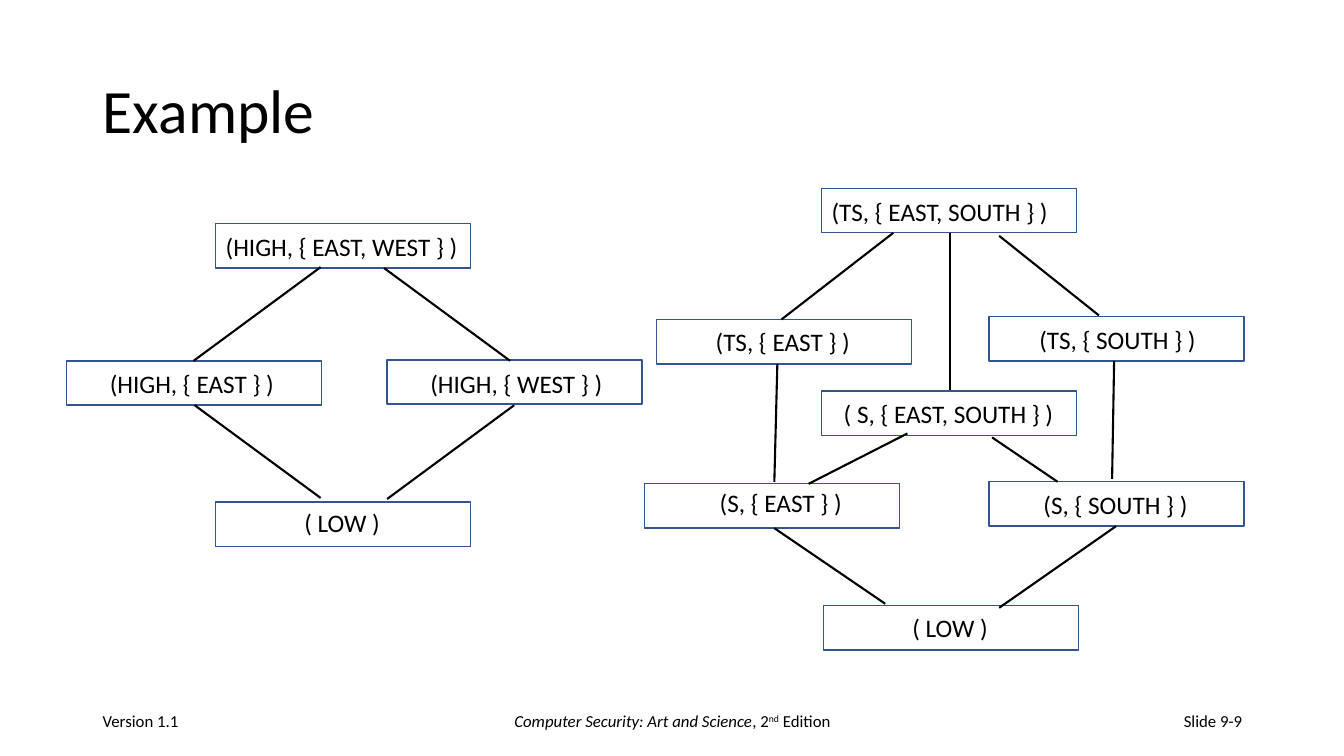
import pptx
import pptx.util
from lxml import etree
from pptx.dml.color import RGBColor
from pptx.enum.shapes import MSO_CONNECTOR, MSO_SHAPE
from pptx.enum.text import MSO_ANCHOR, MSO_AUTO_SIZE, PP_ALIGN
from pptx.oxml.ns import qn

NODE_W, NODE_H, LABEL_H = 253, 44, 40
BLACK, BLUE = "000000", "325491"

# Label, node left and top, then label offset in the node and label width
HIGH_NODES = [
    ("(HIGH, { EAST, WEST } )", 148, 0, 0, 3, NODE_W),
    ("(HIGH, { EAST } )", 0, 136, 33, 2, 185),
    ("(HIGH, { WEST } )", 318, 135, 33, 3, 193),
    ("( LOW )", 148, 276, 78, 0, 96),
]
HIGH_EDGES = [
    (252, 43, 126, 136), (315, 44, 440, 136),
    (127, 180, 252, 272), (444, 180, 318, 273),
]
TS_NODES = [
    ("(TS, { EAST, SOUTH } )", 176, 0, 0, 3, NODE_W),
    ("(TS, { EAST } )", 12, 130, 49, 2, 155),
    ("(TS, { SOUTH } )", 342, 127, 40, 3, 183),
    ("( S, { EAST, SOUTH } )", 176, 201, 12, 2, 230),
    ("(S, { EAST } )", 0, 293, 65, -1, 143),
    ("(S, { SOUTH } )", 342, 291, 44, 3, 165),
    ("( LOW )", 178, 414, 78, 2, 96),
]
TS_EDGES = [
    (247, 44, 136, 130), (303, 44, 303, 200), (352, 47, 451, 126),
    (132, 174, 129, 291), (466, 171, 464, 288),
    (261, 243, 163, 293), (345, 247, 410, 291),
    (129, 337, 239, 412), (468, 335, 352, 416),
]


def px(n):
    """100 px to the inch."""
    return pptx.util.Emu(n * 9144)


def color(value):
    return RGBColor.from_string(value)


def style(p, size):
    for r in p.runs:
        r.font.size = pptx.util.Pt(size)
        r.font.name = "Calibri"
        r.font.color.rgb = color(BLACK)


def add_title(s, x, y, w, h):
    title = s.shapes.title
    title.left, title.top, title.width, title.height = map(px, (x, y, w, h))
    tf = title.text_frame
    tf.text = "Example"
    tf.vertical_anchor = MSO_ANCHOR.MIDDLE
    p = tf.paragraphs[0]
    p.alignment = PP_ALIGN.LEFT
    p.line_spacing = 0.9
    style(p, 44)


def add_text(shapes, x, y, w, h, parts, size, align=PP_ALIGN.LEFT, wrap=True):
    tf = shapes.add_textbox(px(x), px(y), px(w), px(h)).text_frame
    tf.word_wrap = wrap
    p = tf.paragraphs[0]
    p.alignment = align
    for part in parts:
        p.add_run().text = part
    style(p, size)
    return tf


def add_footer(s, x, y, w, h):
    book = ["Computer Security: Art and Science", ", 2", "nd", " Edition"]
    fields = [
        (x, 300, ["Version 1.1"], PP_ALIGN.LEFT),
        (x + (w - 450) // 2, 450, book, PP_ALIGN.CENTER),
        (x + w - 300, 300, ["Slide 9-9"], PP_ALIGN.RIGHT),
    ]
    for left, width, parts, align in fields:
        tf = add_text(s.shapes, left, y, width, h, parts, 12, align)
        tf.vertical_anchor = MSO_ANCHOR.MIDDLE
        if parts is book:
            runs = tf.paragraphs[0].runs
            runs[0].font.italic = True
            runs[2].font._element.set("baseline", "30000")


def add_lattice(s, x, y, nodes, edges):
    shapes = s.shapes.add_group_shape().shapes

    # Framed labels
    for label, left, top, dx, dy, width in nodes:
        left, top = x + left, y + top
        sp = shapes.add_shape(MSO_SHAPE.RECTANGLE, px(left), px(top),
                              px(NODE_W), px(NODE_H))
        sp.shadow.inherit = False
        sp.fill.background()
        sp.line.color.rgb = color(BLUE)
        sp.line.width = pptx.util.Pt(1)
        tf = add_text(shapes, left + dx, top + dy, width, LABEL_H, [label], 18,
                      wrap=width == NODE_W)
        tf.auto_size = MSO_AUTO_SIZE.SHAPE_TO_FIT_TEXT

    # Ordering lines
    for x1, y1, x2, y2 in edges:
        line = shapes.add_connector(MSO_CONNECTOR.STRAIGHT, px(x + x1), px(y + y1),
                                    px(x + x2), px(y + y2))
        line.line.color.rgb = color(BLACK)
        line.line.width = pptx.util.Pt(1.5)
        etree.SubElement(line._element.spPr, qn("a:effectLst"))


def main():
    prs = pptx.Presentation()
    prs.slide_width, prs.slide_height = px(1333), px(750)
    s = prs.slides.add_slide(prs.slide_layouts[5])
    add_title(s, 92, 40, 1150, 145)
    add_footer(s, 92, 695, 1150, 40)
    add_lattice(s, 66, 222, HIGH_NODES, HIGH_EDGES)
    add_lattice(s, 639, 187, TS_NODES, TS_EDGES)
    prs.save("out.pptx")


if __name__ == "__main__":
    main()
